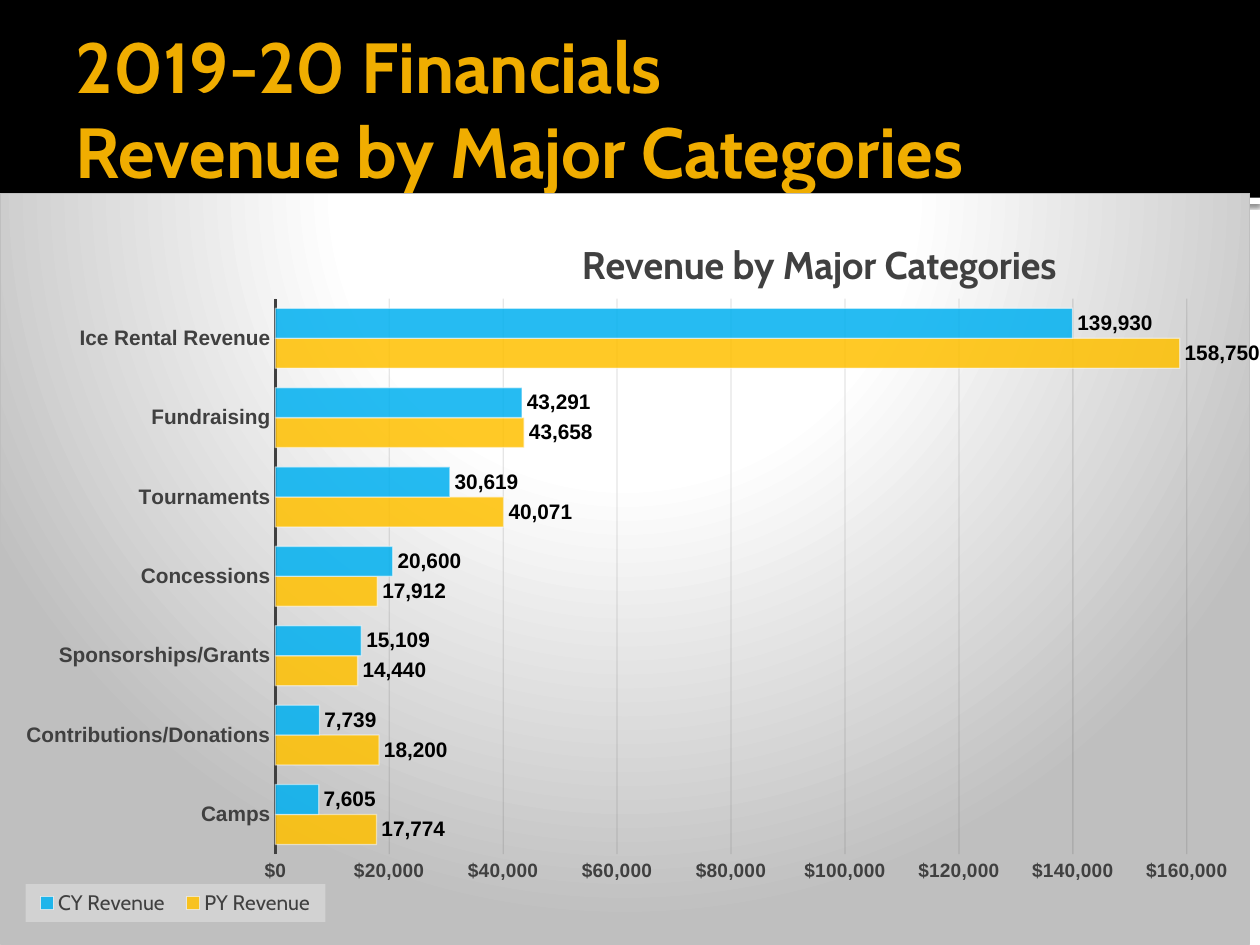
from dataclasses import dataclass

from lxml.etree import SubElement
from pptx import Presentation
from pptx.chart.data import CategoryChartData
from pptx.dml.color import RGBColor
from pptx.enum.chart import XL_CHART_TYPE as ChartType
from pptx.enum.chart import XL_LABEL_POSITION as LabelPos
from pptx.enum.chart import XL_LEGEND_POSITION as LegendPos
from pptx.enum.chart import XL_TICK_MARK as TickMark
from pptx.enum.shapes import MSO_SHAPE as Preset
from pptx.enum.text import MSO_ANCHOR as Anchor
from pptx.enum.text import MSO_AUTO_SIZE as AutoSize
from pptx.enum.text import PP_ALIGN as Align
from pptx.oxml import parse_xml
from pptx.oxml.ns import nsdecls, qn
from pptx.util import Pt


@dataclass(frozen=True)
class Theme:
    heading: str = "Cabin"
    label: str = "Arial"
    gold: str = "F0AD00"
    black: str = "000000"
    white: str = "FFFFFF"
    gray: str = "404040"
    silver: str = "BFBFBF"
    grid: str = "0D0D0D"
    legend: str = "F2F2F2"
    prior: str = "FFC000"
    current: str = "00B0F0"
    title_size: float = 40.5
    chart_title_size: float = 22
    label_size: float = 12
    scale_size: float = 11
    base_size: float = 10


THEME = Theme()
REVENUE = [  # category, prior year, current year
    ("Camps", 17774, 7605),
    ("Contributions/Donations", 18200, 7739),
    ("Sponsorships/Grants", 14440, 15109),
    ("Concessions", 17912, 20600),
    ("Tournaments", 40071, 30619),
    ("Fundraising", 43658, 43291),
    ("Ice Rental Revenue", 158750, 139930),
]


def style_font(font, face, size, color, bold=False):
    font.name, font.size, font.bold = face, Pt(size), bold
    font.color.rgb = RGBColor.from_string(color)


def write(frame, text, align=Align.LEFT, **font_format):
    frame.text = text
    for paragraph in frame.paragraphs:
        paragraph.alignment = align
        for run in paragraph.runs:
            style_font(run.font, **font_format)


def paint(fill, color):
    fill.solid()
    fill.fore_color.rgb = RGBColor.from_string(color)


def stroke(line, color, width):
    paint(line.fill, color)
    line.width = Pt(width)


def fade(element, route, percent):
    """Set the opacity of the solid fill found below element by route."""
    for color in element.xpath(f"{route}/a:solidFill/a:srgbClr"):
        SubElement(color, qn("a:alpha"), val=str(percent * 1000))


def manual_layout(x, y, w=None, h=None, inner=False):
    """Layout in fractions of the chart area."""
    sizes = {"x": x, "y": y, "w": w, "h": h}
    target = '<c:layoutTarget val="inner"/>' if inner else ""
    modes = '<c:xMode val="edge"/><c:yMode val="edge"/>'
    values = "".join(f'<c:{key} val="{size}"/>' for key, size in sizes.items() if size)
    return parse_xml(f'<c:layout {nsdecls("c")}><c:manualLayout>{target}{modes}{values}'
                     "</c:manualLayout></c:layout>")


def place_part(part, layout):
    """Give a chart title or legend its layout."""
    for old in part.findall(qn("c:layout")):
        part.remove(old)
    part.find(qn("c:overlay")).addprevious(layout)


def header_band(slide, box, underline_height):
    left, top, width, height = box
    bands = ((top + height, underline_height, THEME.white), (top, height, THEME.black))
    for depth, (y, band_height, color) in enumerate(bands):
        band = slide.shapes.add_shape(Preset.RECTANGLE, Pt(left), Pt(y), Pt(width), Pt(band_height))
        band.shadow.inherit = False
        paint(band.fill, color)
        band.line.fill.background()
        slide.shapes._spTree.insert(2 + depth, band._element)
        if color == THEME.white:
            effects = band._element.spPr.find(qn("a:effectLst"))
            shadow = SubElement(effects, qn("a:outerShdw"), blurRad=str(Pt(2.5)),
                                dist=str(Pt(0.8)), dir="5400000")
            shade = SubElement(shadow, qn("a:srgbClr"), val=THEME.black)
            SubElement(shade, qn("a:alpha"), val="60000")


def heading(slide, box, text):
    title = slide.shapes.title
    title.left, title.top, title.width, title.height = map(Pt, box)
    frame = title.text_frame
    frame.word_wrap, frame.auto_size = True, AutoSize.NONE
    frame.vertical_anchor = Anchor.MIDDLE
    frame.margin_left = Pt(7.2)
    frame.margin_right = frame.margin_top = frame.margin_bottom = Pt(3.6)
    write(frame, text, face=THEME.heading, size=THEME.title_size, color=THEME.gold, bold=True)


def chart_background(chart):
    stops = "".join(f'<a:gs pos="{pos}000"><a:srgbClr val="{color}"/></a:gs>' for pos, color in
                    ((0, THEME.white), (39, THEME.white), (100, THEME.silver)))
    backdrop = parse_xml(
        f'<c:spPr {nsdecls("c", "a")}><a:gradFill><a:gsLst>{stops}</a:gsLst><a:path path="circle">'
        '<a:fillToRect l="50000" t="-80000" r="50000" b="180000"/></a:path></a:gradFill>'
        f'<a:ln w="{Pt(0.75)}"><a:solidFill><a:srgbClr val="{THEME.silver}"/></a:solidFill></a:ln>'
        "</c:spPr>")
    chart._chartSpace.find(qn("c:chart")).addnext(backdrop)


def chart_axes(chart):
    categories, dollars = chart.category_axis, chart.value_axis
    for axis, size in ((categories, THEME.label_size), (dollars, THEME.scale_size)):
        axis.major_tick_mark = axis.minor_tick_mark = TickMark.NONE
        style_font(axis.tick_labels.font, THEME.label, size, THEME.gray, True)
    stroke(categories.format.line, THEME.gray, 1.5)
    categories.has_major_gridlines = False
    dollars.format.line.fill.background()
    dollars.minimum_scale, dollars.maximum_scale = 0, 160000
    dollars.major_unit = 20000
    dollars.tick_labels.number_format = '"$"#,##0'
    dollars.tick_labels.number_format_is_linked = False
    stroke(dollars.major_gridlines.format.line, THEME.grid, 0.75)
    fade(dollars._element, "c:majorGridlines/c:spPr/a:ln", 10)


def chart_series(plot):
    plot.gap_width, plot.overlap, plot.vary_by_categories = 65, 0, False
    for series, color in zip(plot.series, (THEME.prior, THEME.current)):
        paint(series.format.fill, color)
        stroke(series.format.line, THEME.white, 0.75)
        fade(series._element, "c:spPr", 85)
        fade(series._element, "c:spPr/a:ln", 50)
        labels = series.data_labels
        labels.show_value, labels.position = True, LabelPos.OUTSIDE_END
        labels.number_format, labels.number_format_is_linked = r"#,##0;\-#,##0", False
        style_font(labels.font, THEME.label, THEME.label_size, THEME.black, True)


def chart_legend(chart):
    chart.has_legend = True
    legend = chart.legend
    legend.position, legend.include_in_layout = LegendPos.BOTTOM, False
    style_font(legend.font, THEME.heading, THEME.label_size, THEME.gray)
    place_part(legend._element, manual_layout(0.02, 0.92, 0.24, 0.05))
    panel = parse_xml(f'<c:spPr {nsdecls("c", "a")}><a:solidFill><a:srgbClr val="{THEME.legend}"/>'
                      "</a:solidFill></c:spPr>")
    legend._element.find(qn("c:overlay")).addnext(panel)
    fade(legend._element, "c:spPr", 39)


def revenue_chart(slide, box):
    names, prior, current = zip(*REVENUE)
    revenue = CategoryChartData()
    revenue.categories = names
    revenue.add_series("PY Revenue", prior)
    revenue.add_series("CY Revenue", current)
    chart = slide.shapes.add_chart(ChartType.BAR_CLUSTERED, *map(Pt, box), revenue).chart
    style_font(chart.font, THEME.heading, THEME.base_size, THEME.black)
    write(chart.chart_title.text_frame, "Revenue by Major Categories", align=Align.CENTER,
          face=THEME.heading, size=THEME.chart_title_size, color=THEME.gray, bold=True)
    place_part(chart.chart_title._element, manual_layout(0.46, 0.05))
    plot_area = chart._chartSpace.chart.plotArea
    for old in plot_area.findall(qn("c:layout")):
        plot_area.remove(old)
    plot_area.insert(0, manual_layout(0.22, 0.14, 0.73, 0.74, inner=True))
    chart_background(chart)
    chart_axes(chart)
    chart_series(chart.plots[0])
    chart_legend(chart)


def main():
    deck = Presentation()
    deck.slide_width, deck.slide_height = Pt(720), Pt(540)
    slide = deck.slides.add_slide(deck.slide_layouts[5])
    header_band(slide, (0, 0, 720, 113), underline_height=3.6)
    heading(slide, (36, 12.2, 648, 98.6), "2019-20 Financials\vRevenue by Major Categories")
    revenue_chart(slide, (0, 110.2, 720, 429.8))
    deck.save("out.pptx")


if __name__ == "__main__":
    main()
